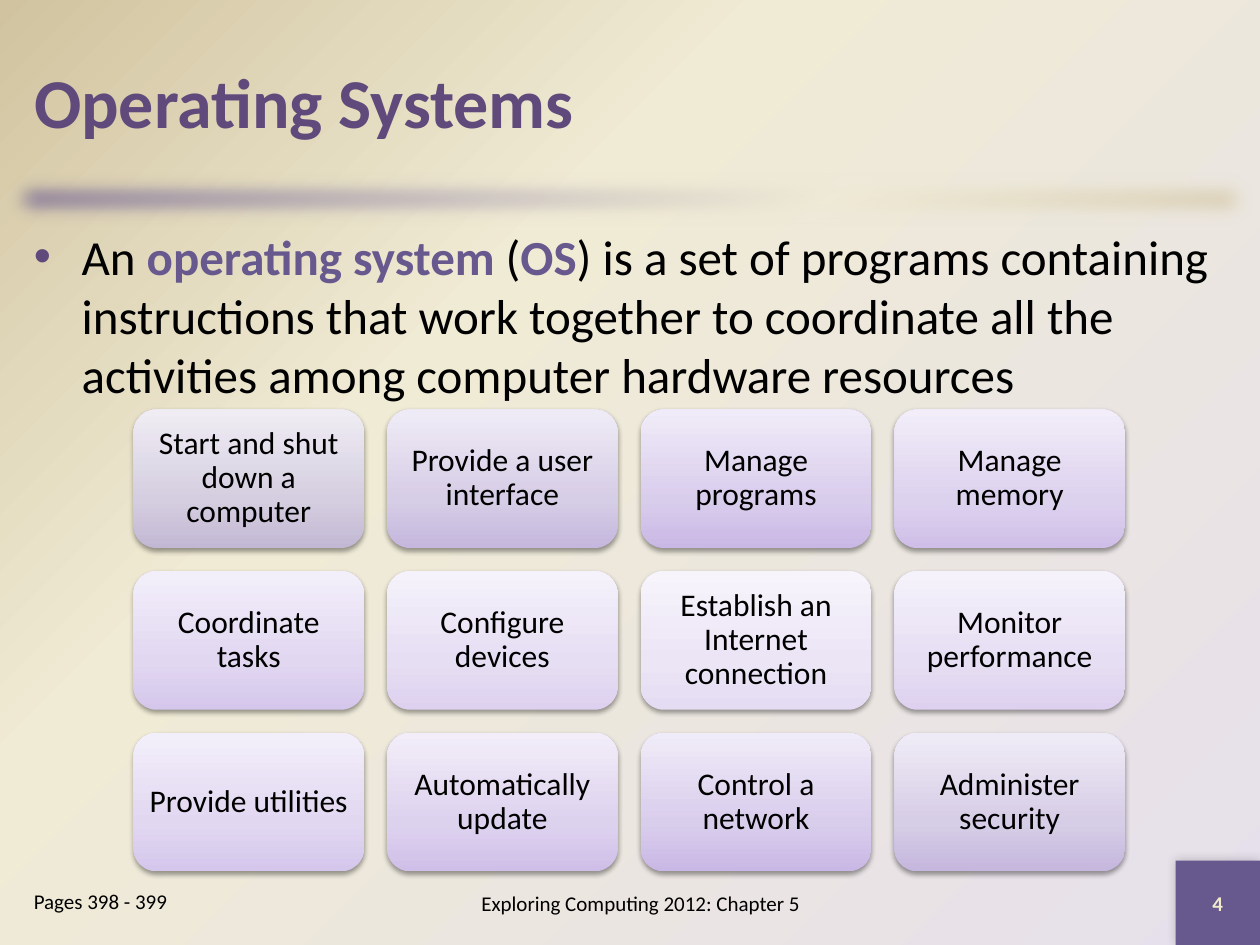
import pptx
import pptx.util
import pptx.oxml
import pptx.oxml.ns
from pptx.dml.color import RGBColor
from pptx.enum.shapes import MSO_SHAPE
from pptx.enum.text import MSO_ANCHOR, MSO_AUTO_SIZE, PP_ALIGN
from pptx.util import Inches

FONT = "Calibri"
BLACK = RGBColor(0x00, 0x00, 0x00)
PURPLE = RGBColor(0x67, 0x58, 0x8E)
DEEP_PURPLE = RGBColor(0x60, 0x4A, 0x7B)
CREAM = RGBColor(0xF0, 0xEB, 0xD5)
TAN = RGBColor(0xD1, 0xC3, 0x9F)
LILAC = RGBColor(0xE6, 0xE0, 0xEC)
NUMBER_CREAM = RGBColor(0xEE, 0xEB, 0xCA)

# Card gradients (bottom, lower third, top); the sequence runs up and back down
CARD_TINTS = [
    [RGBColor.from_string(c) for c in row.split()]
    for row in (
        "C3B8D4 D5CEE0 EFECF3",
        "C5B7DD D6CDE6 EFEBF6",
        "C9B8E5 D9CDEC F0EBF8",
        "CFBFE8 DDD2EE F2EDF9",
        "D5C7EC E1D7F1 F3EFFA",
        "DDD1EF E6DEF3 F5F2FB",
        "E4DCF2 ECE5F6 F7F4FC",
    )
]
FUNCTIONS = [
    "Start and shut down a computer", "Provide a user interface",
    "Manage programs", "Manage memory",
    "Coordinate tasks", "Configure devices",
    "Establish an Internet connection", "Monitor performance",
    "Provide utilities", "Automatically update",
    "Control a network", "Administer security",
]
COLUMNS = 4
CARD_W, CARD_H = 1.83, 1.1
CARD_GAP = CARD_W / 10
GRID_LEFT, GRID_TOP = 1.06, 3.25


def parse_a(xml):
    """Parse a DrawingML element given without its namespace declaration."""
    head, rest = xml.split(">", 1)
    slash = "/" if head.endswith("/") else ""
    return pptx.oxml.parse_xml(
        f"{head.rstrip('/')} {pptx.oxml.ns.nsdecls('a')}{slash}>{rest}")


def set_gradient(fill, parent, colors, middle, direction):
    """Swap a solid fill for a three-stop gradient."""
    fill.solid()
    stops = "".join(
        f'<a:gs pos="{pos * 1000}"><a:srgbClr val="{color}"/></a:gs>'
        for pos, color in zip((0, middle, 100), colors))
    solid = parent.find(pptx.oxml.ns.qn("a:solidFill"))
    parent.replace(solid, parse_a(
        f'<a:gradFill rotWithShape="1"><a:gsLst>{stops}</a:gsLst>{direction}</a:gradFill>'))


def linear(angle):
    return f'<a:lin ang="{angle * 60000}" scaled="0"/>'


def set_effect(sp, effect):
    sp.shadow.inherit = False
    sp._element.spPr.find(pptx.oxml.ns.qn("a:effectLst")).append(parse_a(effect))


def outer_shadow(alpha, blur, distance, angle):
    return (f'<a:outerShdw blurRad="{pptx.util.Pt(blur)}" dist="{pptx.util.Pt(distance)}" '
            f'dir="{angle * 60000}" algn="ctr" rotWithShape="0"><a:srgbClr val="000000">'
            f'<a:alpha val="{alpha * 1000}"/></a:srgbClr></a:outerShdw>')


def add_box(s, kind, left, top, width, height):
    sp = s.shapes.add_shape(
        kind, Inches(left), Inches(top), Inches(width), Inches(height))
    sp.line.fill.background()
    return sp


def add_run(p, text, size, color=BLACK, bold=False):
    r = p.add_run()
    r.text = text
    r.font.name = FONT
    r.font.size = pptx.util.Pt(size)
    r.font.bold = bold
    r.font.color.rgb = color


def add_text(s, left, top, width, height, runs, size,
             align=PP_ALIGN.LEFT, anchor=MSO_ANCHOR.TOP):
    """Add a wrapped text box; runs are (text, color, bold)."""
    box = s.shapes.add_textbox(
        Inches(left), Inches(top), Inches(width), Inches(height))
    tf = box.text_frame
    tf.word_wrap = True
    tf.vertical_anchor = anchor
    p = tf.paragraphs[0]
    p.alignment = align
    for text, color, bold in runs:
        add_run(p, text, size, color, bold)
    return p


def add_bullet(p, color):
    pPr = p._p.get_or_add_pPr()
    pPr.set("marL", str(Inches(0.38)))
    pPr.set("indent", str(Inches(-0.38)))
    p.space_before = pptx.util.Pt(5.6)
    for xml in (f'<a:buClr><a:srgbClr val="{color}"/></a:buClr>',
                '<a:buFont typeface="Arial"/>', '<a:buChar char="•"/>'):
        pPr.append(parse_a(xml))


def add_title(s, text):
    title = s.shapes.title
    title.left, title.top = Inches(0.17), Inches(0.17)
    title.width, title.height = Inches(9.67), Inches(1.25)
    tf = title.text_frame
    tf.auto_size = MSO_AUTO_SIZE.NONE
    tf.vertical_anchor = MSO_ANCHOR.MIDDLE
    p = tf.paragraphs[0]
    p.alignment = PP_ALIGN.LEFT
    add_run(p, text, 40, DEEP_PURPLE, True)


def add_card(s, index, text):
    row, col = divmod(index, COLUMNS)
    sp = add_box(s, MSO_SHAPE.ROUNDED_RECTANGLE,
                 GRID_LEFT + col * (CARD_W + CARD_GAP),
                 GRID_TOP + row * (CARD_H + CARD_GAP), CARD_W, CARD_H)
    tint = CARD_TINTS[min(index, len(FUNCTIONS) - index)]
    set_gradient(sp.fill, sp._element.spPr, tint, 35, linear(270))
    set_effect(sp, outer_shadow(38, 3.1, 1.6, 90))
    tf = sp.text_frame
    tf.word_wrap = True
    tf.vertical_anchor = MSO_ANCHOR.MIDDLE
    tf.margin_left = tf.margin_right = Inches(0.07)
    tf.margin_top = tf.margin_bottom = Inches(0.07)
    p = tf.paragraphs[0]
    p.alignment = PP_ALIGN.CENTER
    p.line_spacing = 0.9
    add_run(p, text, 18)


def add_backdrop(s):
    # Background radiating from the bottom right corner
    fill = s.background.fill
    fill.solid()
    bgPr = s._element.find(".//" + pptx.oxml.ns.qn("p:bgPr"))
    set_gradient(fill, bgPr, (LILAC, CREAM, TAN), 65,
                 '<a:path path="circle"><a:fillToRect l="100000" t="100000"/></a:path>')
    # Soft-edged rule under the title
    rule = add_box(s, MSO_SHAPE.RECTANGLE, 0, 1.33, 10, 0.5)
    set_gradient(rule.fill, rule._element.spPr, (PURPLE, CREAM, TAN), 65, linear(45))
    set_effect(rule, f'<a:softEdge rad="{pptx.util.Pt(12.5)}"/>')
    # Page number square
    square = add_box(s, MSO_SHAPE.RECTANGLE, 9.33, 6.83, 0.67, 0.67)
    square.fill.solid()
    square.fill.fore_color.rgb = PURPLE
    set_effect(square, outer_shadow(20, 6, 0, 225))


def main():
    prs = pptx.Presentation()
    prs.slide_width, prs.slide_height = Inches(10), Inches(7.5)
    s = prs.slides.add_slide(prs.slide_layouts[5])
    add_backdrop(s)
    add_title(s, "Operating Systems")

    # Definition
    p = add_text(s, 0.17, 1.75, 9.67, 1.5, [
        ("An ", BLACK, False),
        ("operating system ", PURPLE, True),
        ("(", BLACK, False),
        ("OS", PURPLE, True),
        (") is a set of programs containing instructions that work together to "
         "coordinate all the activities among computer hardware resources", BLACK, False),
    ], 28)
    add_bullet(p, DEEP_PURPLE)

    # Footer
    add_text(s, 3, 6.92, 4.17, 0.5, [("Exploring Computing 2012: Chapter 5", BLACK, False)],
             12, PP_ALIGN.CENTER, MSO_ANCHOR.MIDDLE)
    add_text(s, 9.33, 6.83, 0.67, 0.67, [("4", NUMBER_CREAM, True)],
             12, PP_ALIGN.CENTER, MSO_ANCHOR.MIDDLE)
    add_text(s, 0.17, 7, 1.83, 0.5, [("Pages 398 - 399", BLACK, False)], 12)

    # Grid of operating system functions
    for index, text in enumerate(FUNCTIONS):
        add_card(s, index, text)

    prs.save("out.pptx")


if __name__ == "__main__":
    main()
